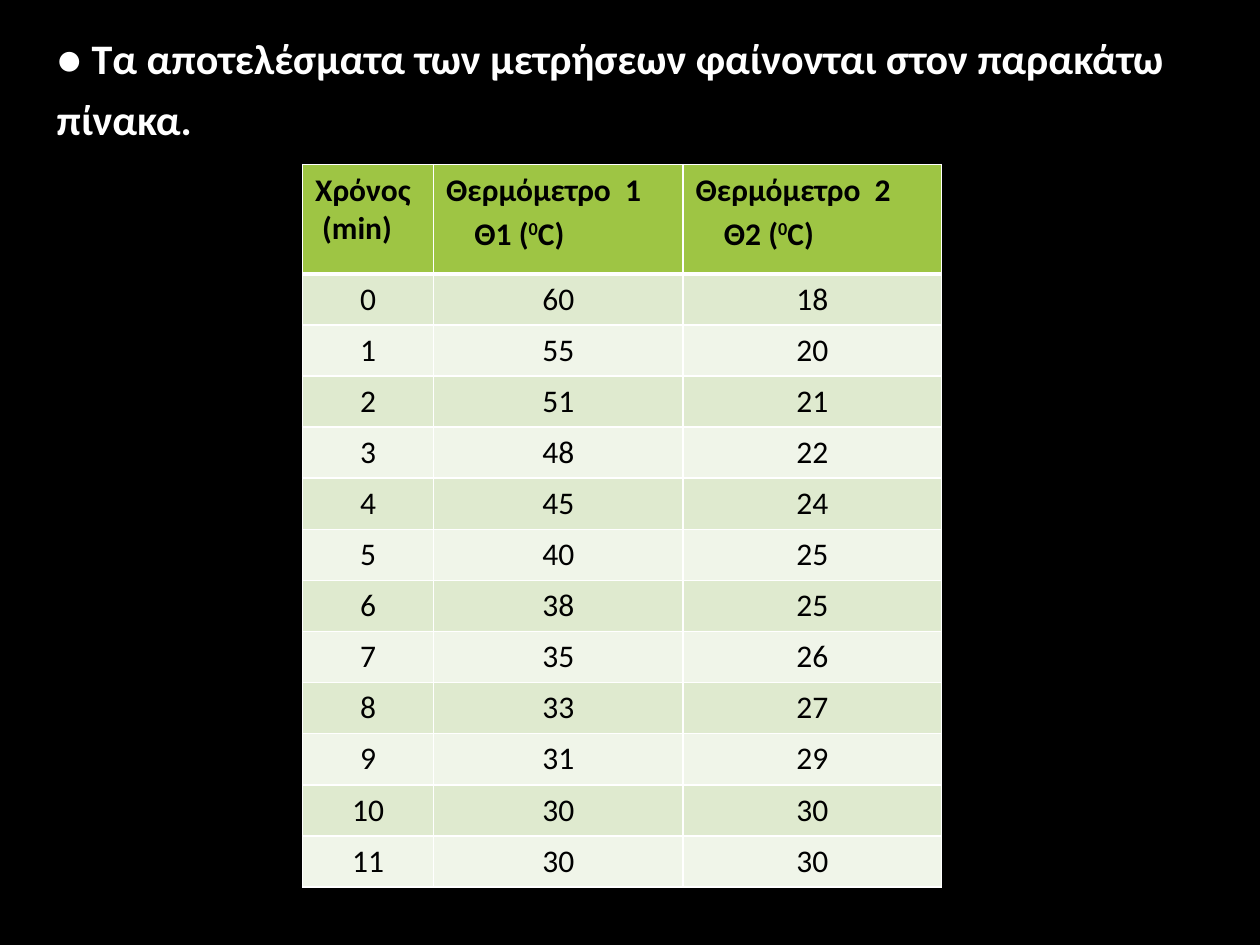
"""Build a slide with a table of two thermometer readings over time."""
from dataclasses import dataclass

from lxml.etree import SubElement
from pptx import Presentation
from pptx.dml.color import RGBColor
from pptx.enum.text import MSO_ANCHOR as Anchor, MSO_AUTO_SIZE as AutoSize, PP_ALIGN as Align
from pptx.oxml.ns import qn
from pptx.util import Cm, Pt

COLORS = {"background": "000000", "heading": "FFFFFF", "text": "000000", "border": "FFFFFF",
          "header": "9EC544", "odd": "DFEACF", "even": "F0F5E9"}
FONT = "Calibri"
HEADING = "● Τα αποτελέσματα των μετρήσεων φαίνονται στον παρακάτω πίνακα."
THERMOMETER_1 = [60, 55, 51, 48, 45, 40, 38, 35, 33, 31, 30, 30]
THERMOMETER_2 = [18, 20, 21, 22, 24, 25, 25, 26, 27, 29, 30, 30]
COLUMN_WIDTHS = [2.64, 5.03, 5.21]
HEADER_HEIGHT, ROW_HEIGHT = 2.2, 1.03


@dataclass
class Header:
    """Two-line column heading; the unit pieces alternate normal and superscript."""
    name: str
    unit: list[str]
    indent: float
    spacing: float


HEADERS = [Header("Χρόνος", ["(min)"], 0.14, 1.0),
           Header("Θερμόμετρο  1", ["Θ1 (", "0", "C)"], 0.57, 1.15),
           Header("Θερμόμετρο  2", ["Θ2 (", "0", "C)"], 0.57, 1.15)]


def add_run(paragraph, text: str, size: int, color: str, bold: bool = False,
            raised: bool = False) -> None:
    """Append one formatted run."""
    run = paragraph.add_run()
    run.text = text
    font = run.font
    font.name, font.size, font.bold = FONT, Pt(size), bold
    font.color.rgb = RGBColor.from_string(COLORS[color])
    if raised:
        font._element.set("baseline", "30000")


def set_indent(paragraph, left: float) -> None:
    """Set the left margin in centimetres, with no hanging indent."""
    properties = paragraph._p.get_or_add_pPr()
    properties.set("marL", str(Cm(left)))
    properties.set("indent", "0")


def style_cell(cell, fill: str, top: int = 1, bottom: int = 1) -> None:
    """Give a cell its borders, in points, and its fill."""
    properties = cell._tc.get_or_add_tcPr()
    for side, width in {"L": 1, "R": 1, "T": top, "B": bottom}.items():
        line = SubElement(properties, qn(f"a:ln{side}"), w=str(Pt(width)))
        solid = SubElement(line, qn("a:solidFill"))
        SubElement(solid, qn("a:srgbClr"), val=COLORS["border"])
    cell.fill.solid()
    cell.fill.fore_color.rgb = RGBColor.from_string(COLORS[fill])


def fill_header(cell, header: Header) -> None:
    """Write a column heading."""
    style_cell(cell, "header", bottom=3)
    add_run(cell.text_frame.paragraphs[0], header.name, 18, "text", bold=True)
    unit = cell.text_frame.add_paragraph()
    set_indent(unit, header.indent)
    unit.line_spacing = header.spacing
    for index, piece in enumerate(header.unit):
        add_run(unit, piece, 18, "text", bold=True, raised=index % 2 == 1)


def add_heading(slide) -> None:
    """Write the heading in the body placeholder and drop the unused title."""
    title = slide.shapes.title._element
    title.getparent().remove(title)
    body = slide.placeholders[1]
    body.left, body.top, body.width, body.height = Cm(0.51), Cm(0.33), Cm(24.2), Cm(18.2)
    frame = body.text_frame
    frame.word_wrap, frame.auto_size = True, AutoSize.NONE
    frame.vertical_anchor = Anchor.TOP
    paragraph = frame.paragraphs[0]
    set_indent(paragraph, 0.38)
    SubElement(paragraph._p.get_or_add_pPr(), qn("a:buNone"))
    paragraph.alignment = Align.LEFT
    paragraph.line_spacing, paragraph.space_before = 1.2, Pt(0)
    add_run(paragraph, HEADING, 24, "heading", bold=True)


def add_readings(slide) -> None:
    """Draw the table of readings, one row per minute."""
    readings = list(zip(range(len(THERMOMETER_1)), THERMOMETER_1, THERMOMETER_2))
    height = HEADER_HEIGHT + ROW_HEIGHT * len(readings)
    table = slide.shapes.add_table(len(readings) + 1, len(HEADERS), Cm(6.1), Cm(3.32),
                                   Cm(sum(COLUMN_WIDTHS)), Cm(height)).table
    for column, width in zip(table.columns, COLUMN_WIDTHS):
        column.width = Cm(width)
    for index, row in enumerate(table.rows):
        row.height = Cm(ROW_HEIGHT if index else HEADER_HEIGHT)
    for column, header in enumerate(HEADERS):
        fill_header(table.cell(0, column), header)
    for row, values in enumerate(readings, start=1):
        for column, value in enumerate(values):
            cell = table.cell(row, column)
            style_cell(cell, "odd" if row % 2 else "even", top=3 if row == 1 else 1)
            paragraph = cell.text_frame.paragraphs[0]
            paragraph.alignment = Align.CENTER
            add_run(paragraph, str(value), 18, "text")


def main() -> None:
    """Build and save the presentation."""
    presentation = Presentation()
    presentation.slide_width, presentation.slide_height = Cm(25.4), Cm(19.05)
    slide = presentation.slides.add_slide(presentation.slide_layouts[1])
    slide.background.fill.solid()
    slide.background.fill.fore_color.rgb = RGBColor.from_string(COLORS["background"])
    add_heading(slide)
    add_readings(slide)
    presentation.save("out.pptx")


if __name__ == "__main__":
    main()
